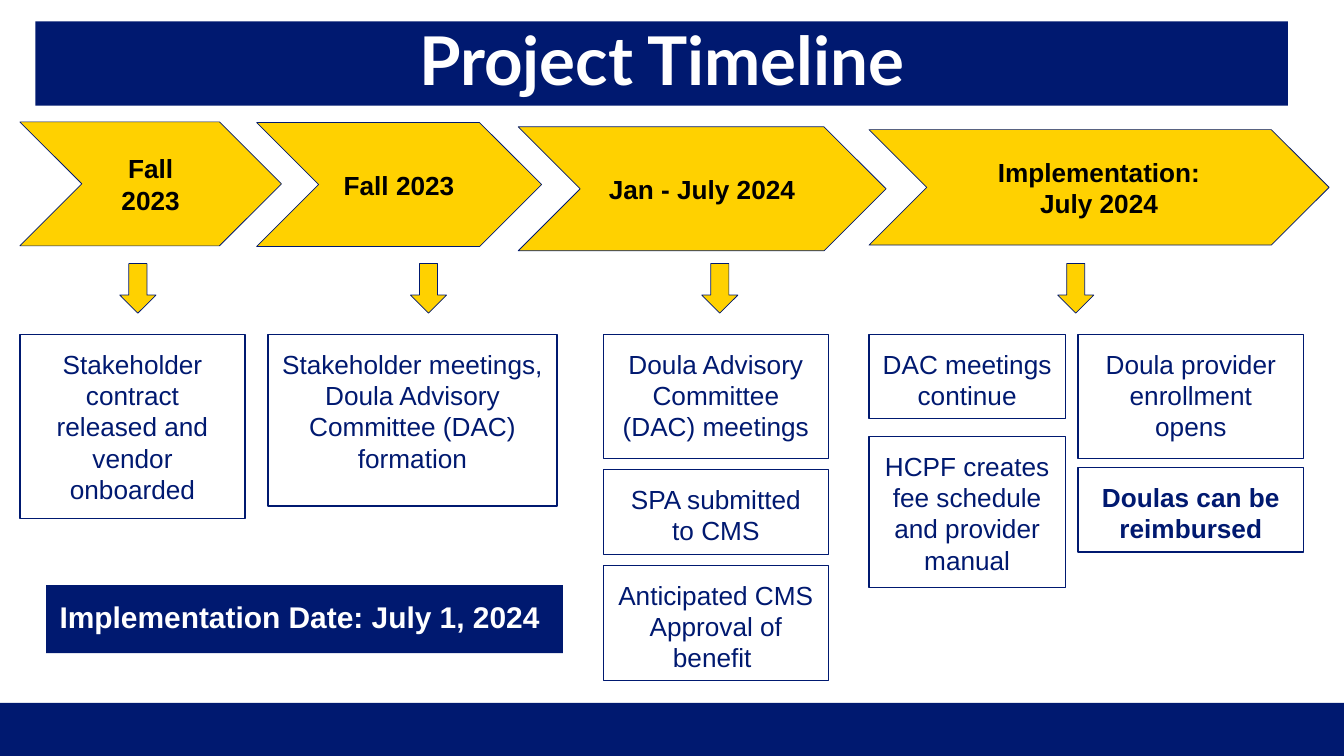
from dataclasses import dataclass

from pptx import Presentation
from pptx import util as u
from pptx.dml.color import RGBColor
from pptx.enum import shapes, text

Pt = u.Pt
SHAPE = shapes.MSO_SHAPE
ALIGN = text.PP_ALIGN
ANCHOR = text.MSO_ANCHOR


@dataclass(frozen=True)
class Theme:
    navy: RGBColor = RGBColor(0x00, 0x19, 0x70)
    gold: RGBColor = RGBColor(0xFF, 0xD1, 0x00)
    white: RGBColor = RGBColor(0xFF, 0xFF, 0xFF)
    black: RGBColor = RGBColor(0x00, 0x00, 0x00)
    title_font: str = "Lato"
    body_font: str = "Arial"
    title_size: float = 68.3
    date_size: float = 30.4
    body_size: float = 26.6
    inset: float = 13.7
    thin: float = 0.75


T = Theme()
WIDTH, HEIGHT = 1365.12, 768.24
CARD_TOP = 339.84
ARROW_TOP, ARROW_W, ARROW_H = 267.84, 36.72, 50.4

# Chevron: box and lines. Card: left, offset below CARD_TOP, width, height, lines.
PHASES = [
    dict(chevron=(20.16, 123.84, 265.68, 126), label=["Fall 2023"],
         arrow=121.68, outline=1.5, cards=[
             (20.16, 0, 228.96, 187.2,
              ["Stakeholder contract released and vendor onboarded"])]),
    dict(chevron=(260.64, 124.56, 289.44, 126), label=["Fall 2023"],
         arrow=416.88, outline=1.5, cards=[
             (272.16, 0, 293.76, 174.24,
              ["Stakeholder meetings, ",
               "Doula Advisory Committee (DAC) formation"])]),
    dict(chevron=(526.32, 128.88, 373.68, 126), label=["Jan - July 2024"],
         arrow=712.8, outline=1, cards=[
             (612.72, 0, 228.96, 126, ["Doula Advisory Committee (DAC) meetings"]),
             (612.72, 137.52, 228.96, 85.68, ["SPA submitted to CMS"]),
             (612.72, 234.72, 228.96, 116.64,
              ["Anticipated CMS Approval of benefit "])]),
    dict(chevron=(882.72, 131.76, 467.28, 117.36),
         label=["Implementation:", "July 2024"],
         arrow=1074.24, outline=1.5, cards=[
             (882.72, 0, 199.44, 85.68, ["DAC meetings continue"]),
             (882.72, 103.68, 199.44, 153.36,
              ["HCPF creates fee schedule and provider manual"]),
             (1095.12, 0, 228.96, 126, ["Doula provider enrollment opens"]),
             (1095.12, 135.36, 228.96, 85.68, ["Doulas can be reimbursed"])]),
]
BOLD_CARDS = {"Doulas can be reimbursed"}


def add_block(s, kind, box, fill, outline=0):
    """Add a flat navy-outlined shape; an outline of 0 means no line."""
    sp = s.shapes.add_shape(kind, *(Pt(v) for v in box))
    sp.shadow.inherit = False
    sp.fill.solid()
    sp.fill.fore_color.rgb = fill
    if outline:
        sp.line.color.rgb = T.navy
        sp.line.width = Pt(outline)
    else:
        sp.line.fill.background()
    return sp


def write(sp, lines, color, size=T.body_size, font=T.body_font, bold=False,
          align=ALIGN.CENTER, anchor=ANCHOR.TOP, inset_y=T.inset, spacing=None):
    tf = sp.text_frame
    tf.word_wrap = True
    tf.vertical_anchor = anchor
    tf.margin_left = tf.margin_right = Pt(T.inset)
    tf.margin_top = tf.margin_bottom = Pt(inset_y)
    for i, line in enumerate(lines):
        p = tf.paragraphs[0] if i == 0 else tf.add_paragraph()
        p.alignment = align
        if spacing:
            p.line_spacing = spacing
        r = p.add_run()
        r.text = line
        r.font.name, r.font.size, r.font.bold = font, Pt(size), bold
        r.font.color.rgb = color


def add_title(s, box):
    sp = add_block(s, SHAPE.RECTANGLE, box, T.navy)
    write(sp, ["Project Timeline"], T.white, T.title_size, T.title_font,
          bold=True, anchor=ANCHOR.MIDDLE, inset_y=6.5, spacing=0.9)


def add_phase(s, chevron, label, arrow, outline, cards):
    """Add one phase: its chevron, the arrow below it and its cards."""
    sp = add_block(s, SHAPE.CHEVRON, chevron, T.gold, T.thin)
    write(sp, label, T.black, bold=True, anchor=ANCHOR.MIDDLE)
    add_block(s, SHAPE.DOWN_ARROW, (arrow, ARROW_TOP, ARROW_W, ARROW_H),
              T.gold, T.thin)
    for left, offset, width, height, lines in cards:
        sp = add_block(s, SHAPE.RECTANGLE,
                       (left, CARD_TOP + offset, width, height), T.white, outline)
        write(sp, lines, T.navy, bold=lines[0] in BOLD_CARDS)


def add_date_banner(s, box):
    sp = add_block(s, SHAPE.RECTANGLE, box, T.navy)
    write(sp, ["Implementation Date: July 1, 2024"], T.white, T.date_size,
          bold=True, align=ALIGN.LEFT)


def main():
    prs = Presentation()
    prs.slide_width, prs.slide_height = Pt(WIDTH), Pt(HEIGHT)
    s = prs.slides.add_slide(prs.slide_layouts[6])
    add_block(s, SHAPE.RECTANGLE, (0, HEIGHT - 54, WIDTH, 54), T.navy)
    add_title(s, (36, 21.6, 1272.24, 85.68))
    for phase in PHASES:
        add_phase(s, **phase)
    add_date_banner(s, (46.8, 594.72, 524.88, 69.12))
    prs.save("out.pptx")


if __name__ == "__main__":
    main()
